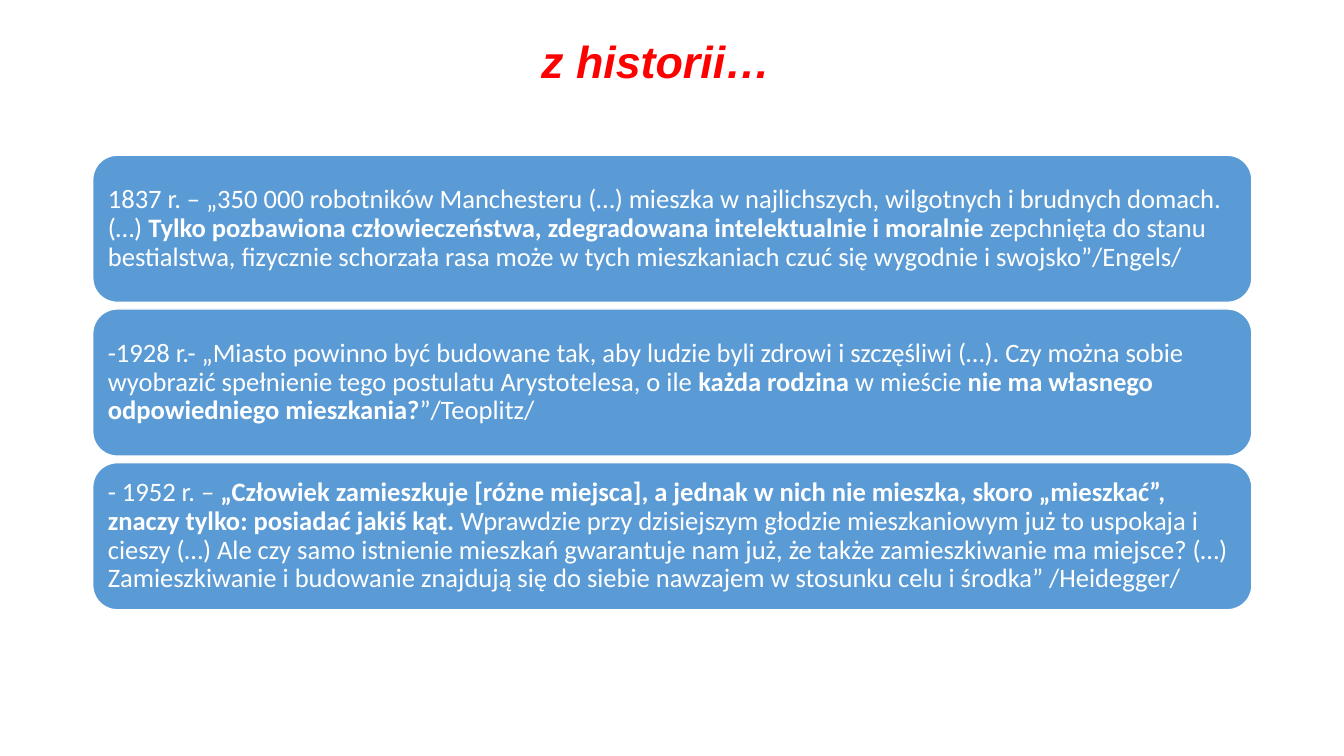
from pptx import Presentation
from pptx.dml.color import RGBColor
from pptx.enum.shapes import MSO_SHAPE
from pptx.enum.text import MSO_ANCHOR, PP_ALIGN
from pptx.util import Pt

ROUNDED = MSO_SHAPE.ROUNDED_RECTANGLE
MIDDLE = MSO_ANCHOR.MIDDLE
LEFT = PP_ALIGN.LEFT

COLOURS = {"title": "FF0000", "card": "5B9BD5", "white": "FFFFFF"}

CARD_LEFT, CARD_TOP, CARD_WIDTH, CARD_HEIGHT = 66.24, 110.9, 828, 105.1
CARD_PITCH = 109.8
CARD_INSET = 5.7

# Each quote is a list of (text, bold) spans.
QUOTES = [
    [
        ("1837 r. – „350 000 robotników Manchesteru (…) mieszka w najlichszych, "
         "wilgotnych i brudnych domach. (…) ", False),
        ("Tylko pozbawiona człowieczeństwa, zdegradowana intelektualnie "
         "i moralnie ", True),
        ("zepchnięta do stanu bestialstwa, fizycznie schorzała rasa może w tych "
         "mieszkaniach czuć się wygodnie i swojsko”/Engels/", False),
    ],
    [
        ("-1928 r.- „Miasto powinno być budowane tak, aby ludzie byli zdrowi "
         "i szczęśliwi (…). Czy można sobie wyobrazić spełnienie tego postulatu "
         "Arystotelesa, o ile ", False),
        ("każda rodzina", True),
        (" w mieście ", False),
        ("nie ma własnego odpowiedniego mieszkania?", True),
        ("”/Teoplitz/", False),
    ],
    [
        ("- 1952 r. – ", False),
        ("„Człowiek zamieszkuje [różne miejsca], a jednak w nich nie mieszka, "
         "skoro „mieszkać”, znaczy tylko: posiadać jakiś kąt. ", True),
        ("Wprawdzie przy dzisiejszym głodzie mieszkaniowym już to uspokaja "
         "i cieszy (…) Ale czy samo istnienie mieszkań gwarantuje nam już, że "
         "także zamieszkiwanie ma miejsce? (…) Zamieszkiwanie i budowanie "
         "znajdują się do siebie nawzajem w stosunku celu i środka” "
         "/Heidegger/", False),
    ],
]


def colour(name):
    return RGBColor.from_string(COLOURS[name])


def format_paragraph(para, font_name, size, colour_name):
    para.alignment = LEFT
    para.line_spacing = 0.9
    para.font.name = font_name
    para.font.size = Pt(size)
    para.font.color.rgb = colour(colour_name)


def set_title(page, text):
    title = page.shapes.title
    title.left, title.top = Pt(379.4), Pt(15.8)
    title.width, title.height = Pt(324.7), Pt(60.5)
    frame = title.text_frame
    frame.text = text
    frame.vertical_anchor = MIDDLE
    para = frame.paragraphs[0]
    format_paragraph(para, "Arial", 32, "title")
    para.font.bold = True
    para.font.italic = True


def add_quote_card(page, top, spans):
    card = page.shapes.add_shape(
        ROUNDED, Pt(CARD_LEFT), Pt(top), Pt(CARD_WIDTH), Pt(CARD_HEIGHT))
    card.shadow.inherit = False
    card.fill.solid()
    card.fill.fore_color.rgb = colour("card")
    card.line.color.rgb = colour("white")
    card.line.width = Pt(1)

    frame = card.text_frame
    frame.word_wrap = True
    frame.vertical_anchor = MIDDLE
    frame.margin_left = frame.margin_right = Pt(CARD_INSET)
    frame.margin_top = frame.margin_bottom = Pt(CARD_INSET)
    para = frame.paragraphs[0]
    format_paragraph(para, "Calibri", 19, "white")
    for text, bold in spans:
        span = para.add_run()
        span.text = text
        span.font.bold = bold


def main():
    deck = Presentation()
    deck.slide_width, deck.slide_height = Pt(960), Pt(540)
    page = deck.slides.add_slide(deck.slide_layouts[5])
    set_title(page, "z historii…")
    for index, spans in enumerate(QUOTES):
        add_quote_card(page, CARD_TOP + index * CARD_PITCH, spans)
    deck.save("out.pptx")


if __name__ == "__main__":
    main()
